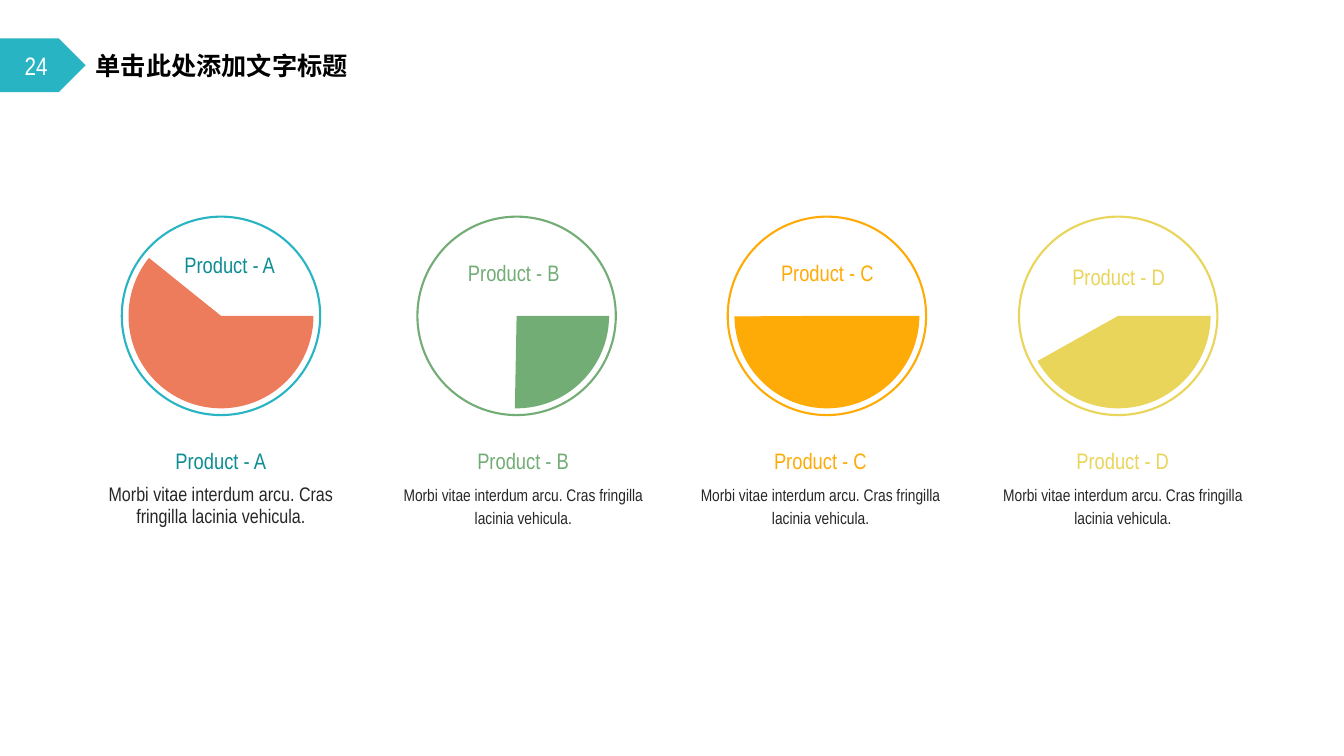
from pptx import Presentation
from pptx.dml.color import RGBColor
from pptx.enum.shapes import MSO_SHAPE as Preset
from pptx.enum.text import MSO_ANCHOR as Anchor, MSO_AUTO_SIZE as AutoSize, PP_ALIGN as Align
from pptx.util import Cm, Pt

COLOURS = {
    "teal": "28B4C3", "dark teal": "0E8D94", "coral": "ED7C5C", "green": "72AD75",
    "orange": "FFAB07", "yellow": "E9D559", "text": "262626", "black": "000000", "white": "FFFFFF",
}


def colour(name):
    return RGBColor.from_string(COLOURS[name])


def write(shape, text, tint, size, align=Align.CENTER, anchor=Anchor.TOP, bold=False, spacing=None):
    frame = shape.text_frame
    for name, value in {"word_wrap": True, "auto_size": AutoSize.NONE, "vertical_anchor": anchor}.items():
        setattr(frame, name, value)
    para = frame.paragraphs[0]
    para.alignment = align
    para.line_spacing = spacing
    span = para.add_run()
    span.text = text
    for name, value in {"name": "Arial Narrow", "size": Pt(size), "bold": bold}.items():
        setattr(span.font, name, value)
    span.font.color.rgb = colour(tint)


deck = Presentation()
deck.slide_width, deck.slide_height = Cm(33.87), Cm(19.05)
page = deck.slides.add_slide(deck.slide_layouts[5])
shapes = page.shapes

# Heading: page number tag and title
tag = shapes.add_shape(Preset.PENTAGON, 0, Cm(0.97), Cm(2.16), Cm(1.35))
tag.shadow.inherit = False
tag.fill.solid()
tag.fill.fore_color.rgb = colour("teal")
tag.line.fill.background()
write(tag, "24", "white", 18, anchor=Anchor.MIDDLE)

title = shapes.title
title.left, title.top, title.width, title.height = Cm(2.16), Cm(1.14), Cm(7.47), Cm(1.02)
write(title, "单击此处添加文字标题", "black", 18, Align.LEFT, Anchor.MIDDLE, bold=True)

# Products: letter, ring, pie and text colours, pie angle in degrees,
# ring left, inner label left and top, caption left, body size
products = [
    ("A", "teal", "coral", "dark teal", 218.8, 3.07, 4.24, 6.2, 2.39, 14),
    ("B", "green", "green", "green", 91.09, 10.52, 11.4, 6.4, 10.01, 12),
    ("C", "orange", "orange", "orange", 179.66, 18.34, 19.3, 6.4, 17.5, 12),
    ("D", "yellow", "yellow", "yellow", 150.77, 25.68, 26.64, 6.5, 25.12, 12),
]
ring_top, ring_size, gap = 5.46, 5, 0.17
pie_size = ring_size - 2 * gap

for letter, ring_tint, pie_tint, text_tint, angle, left, label_left, label_top, caption_left, size in products:
    # Ring around a pie
    ring = shapes.add_shape(Preset.OVAL, Cm(left), Cm(ring_top), Cm(ring_size), Cm(ring_size))
    ring.shadow.inherit = False
    ring.fill.background()
    ring.line.color.rgb = colour(ring_tint)
    ring.line.width = Pt(1.5)

    pie = shapes.add_shape(Preset.PIE, Cm(left + gap), Cm(ring_top + gap), Cm(pie_size), Cm(pie_size))
    pie.shadow.inherit = False
    pie.adjustments[0] = 0
    pie.adjustments[1] = angle * 0.6  # 60000 units per degree, stored in 100000ths
    pie.fill.solid()
    pie.fill.fore_color.rgb = colour(pie_tint)
    pie.line.fill.background()

    # Inner label, caption and body
    for box_left, box_top, width in [(label_left, label_top, 3.1), (caption_left, 11.15, 6.35)]:
        box = shapes.add_textbox(Cm(box_left), Cm(box_top), Cm(width), Cm(0.94))
        write(box, f"Product - {letter}", text_tint, 16)
    body = shapes.add_textbox(Cm(caption_left - 0.4), Cm(12.04), Cm(7.16), Cm(1.52))
    write(body, "Morbi vitae interdum arcu. Cras fringilla lacinia vehicula.", "text", size, spacing=Pt(16))

deck.save("out.pptx")
